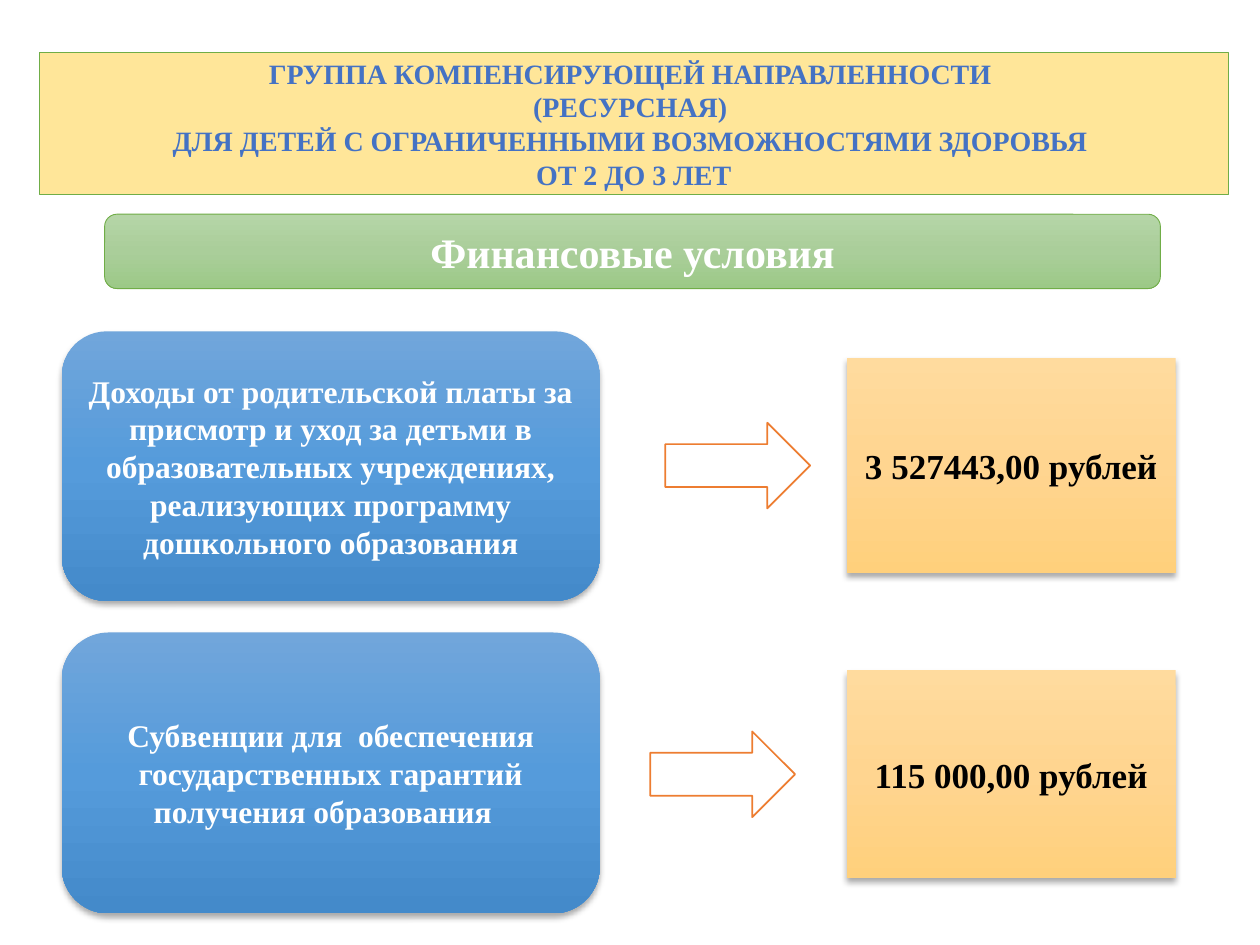
from copy import deepcopy

from pptx import Presentation
from pptx.dml.color import RGBColor
from pptx.enum.shapes import MSO_SHAPE as Preset
from pptx.enum.text import MSO_ANCHOR, MSO_AUTO_SIZE, PP_ALIGN
from pptx.oxml import parse_xml
from pptx.oxml.ns import nsdecls, qn
from pptx.util import Inches, Pt

# Content: a vertical tab is a line break inside a paragraph
HEADING = [
    "ГРУППА КОМПЕНСИРУЮЩЕЙ НАПРАВЛЕННОСТИ \v(РЕСУРСНАЯ) ",
    "ДЛЯ ДЕТЕЙ С ОГРАНИЧЕННЫМИ ВОЗМОЖНОСТЯМИ ЗДОРОВЬЯ \vОТ 2 ДО 3 ЛЕТ",
]
SUBHEADING = ["Финансовые условия"]
FUNDING = [
    {
        "source": "Доходы от родительской платы за присмотр и уход за детьми в "
                  "образовательных учреждениях, реализующих программу "
                  "дошкольного образования",
        "amount": "3 527443,00 рублей",
        "source_y": (2.63, 2.14), "amount_y": (2.84, 1.71), "arrow_x": 5.28,
    },
    {
        "source": "Субвенции для  обеспечения государственных гарантий "
                  "получения образования  ",
        "amount": "115 000,00 рублей",
        "source_y": (5.02, 2.23), "amount_y": (5.32, 1.65), "arrow_x": 5.16,
    },
]

# Style and columns
COLORS = {"cream": "FFE699", "green": "70AD47", "orange": "ED7D31",
          "blue": "4472C4", "white": "FFFFFF", "black": "000000"}
GRADIENTS = {"green": ("B5D5A7", "AACE9A", "9CC987"),
             "amber": ("FFDB9E", "FFD590", "FFD07C"),
             "blue": ("71A6DB", "559BDB", "448ACA")}
FONT = "Times New Roman"
SOURCE_X, SOURCE_W = 0.49, 4.27
AMOUNT_X, AMOUNT_W = 6.72, 2.61
ARROW_W, ARROW_H = 1.15, 0.68


def color(name):
    return RGBColor.from_string(COLORS[name])


def write(shape, paragraphs, size, ink):
    frame = shape.text_frame
    frame.word_wrap = True
    frame.auto_size = MSO_AUTO_SIZE.NONE
    frame.vertical_anchor = MSO_ANCHOR.MIDDLE
    for index, text in enumerate(paragraphs):
        paragraph = frame.add_paragraph() if index else frame.paragraphs[0]
        paragraph.text = text
        paragraph.alignment = PP_ALIGN.CENTER
        for run in paragraph.runs:
            run.font.name, run.font.size, run.font.bold = FONT, Pt(size), True
            run.font.color.rgb = color(ink)


def paint(shape, fill=None, gradient=None, line=None, width=0.5):
    if gradient:
        shape.fill.gradient()
        shape.fill.gradient_angle = 270
        stops = shape._element.spPr.find(".//" + qn("a:gsLst"))
        stops.insert(1, deepcopy(stops[0]))
        for index, stop in enumerate(shape.fill.gradient_stops):
            stop.position = index / 2
            stop.color.rgb = RGBColor.from_string(GRADIENTS[gradient][index])
    else:
        shape.fill.solid()
        shape.fill.fore_color.rgb = color(fill)
    if line:
        shape.line.color.rgb = color(line)
        shape.line.width = Pt(width)
    else:
        shape.line.fill.background()


def add_block(preset, box, shadow=False, **look):
    shape = slide.shapes.add_shape(preset, *map(Inches, box))
    paint(shape, **look)
    shape.shadow.inherit = False
    if shadow:
        shape._element.spPr.find(qn("a:effectLst")).append(parse_xml(
            f'<a:outerShdw {nsdecls("a")} blurRad="{Pt(3.5)}" dist="{Pt(2.2)}" '
            'dir="5400000" algn="ctr" rotWithShape="0"><a:srgbClr val="000000">'
            '<a:alpha val="32000"/></a:srgbClr></a:outerShdw>'))
    return shape


prs = Presentation()
prs.slide_width, prs.slide_height = Inches(10), Inches(7.5)
slide = prs.slides.add_slide(prs.slide_layouts[5])

# Heading: the title placeholder with a rounded outline
heading = slide.shapes.title
heading.left, heading.top, heading.width, heading.height = map(
    Inches, (0.31, 0.42, 9.44, 1.12))
heading._element.spPr.find(qn("a:xfrm")).addnext(parse_xml(
    f'<a:prstGeom {nsdecls("a")} prst="roundRect"><a:avLst/></a:prstGeom>'))
paint(heading, fill="cream", line="green")
write(heading, HEADING, size=16, ink="blue")

# Subheading band
band = add_block(Preset.ROUNDED_RECTANGLE, (0.83, 1.7, 8.38, 0.59),
                 gradient="green", line="green")
write(band, SUBHEADING, size=24, ink="white")

# One row per funding source: source, arrow, amount
for row in FUNDING:
    top, height = row["source_y"]
    source = add_block(Preset.ROUNDED_RECTANGLE, (SOURCE_X, top, SOURCE_W, height),
                       gradient="blue", shadow=True)
    write(source, [row["source"]], size=18, ink="white")

    top, height = row["amount_y"]
    amount = add_block(Preset.RECTANGLE, (AMOUNT_X, top, AMOUNT_W, height),
                       gradient="amber", shadow=True)
    write(amount, [row["amount"]], size=20, ink="black")

    arrow_top = top + (height - ARROW_H) / 2
    add_block(Preset.RIGHT_ARROW, (row["arrow_x"], arrow_top, ARROW_W, ARROW_H),
              fill="white", line="orange", width=1)

prs.save("out.pptx")
